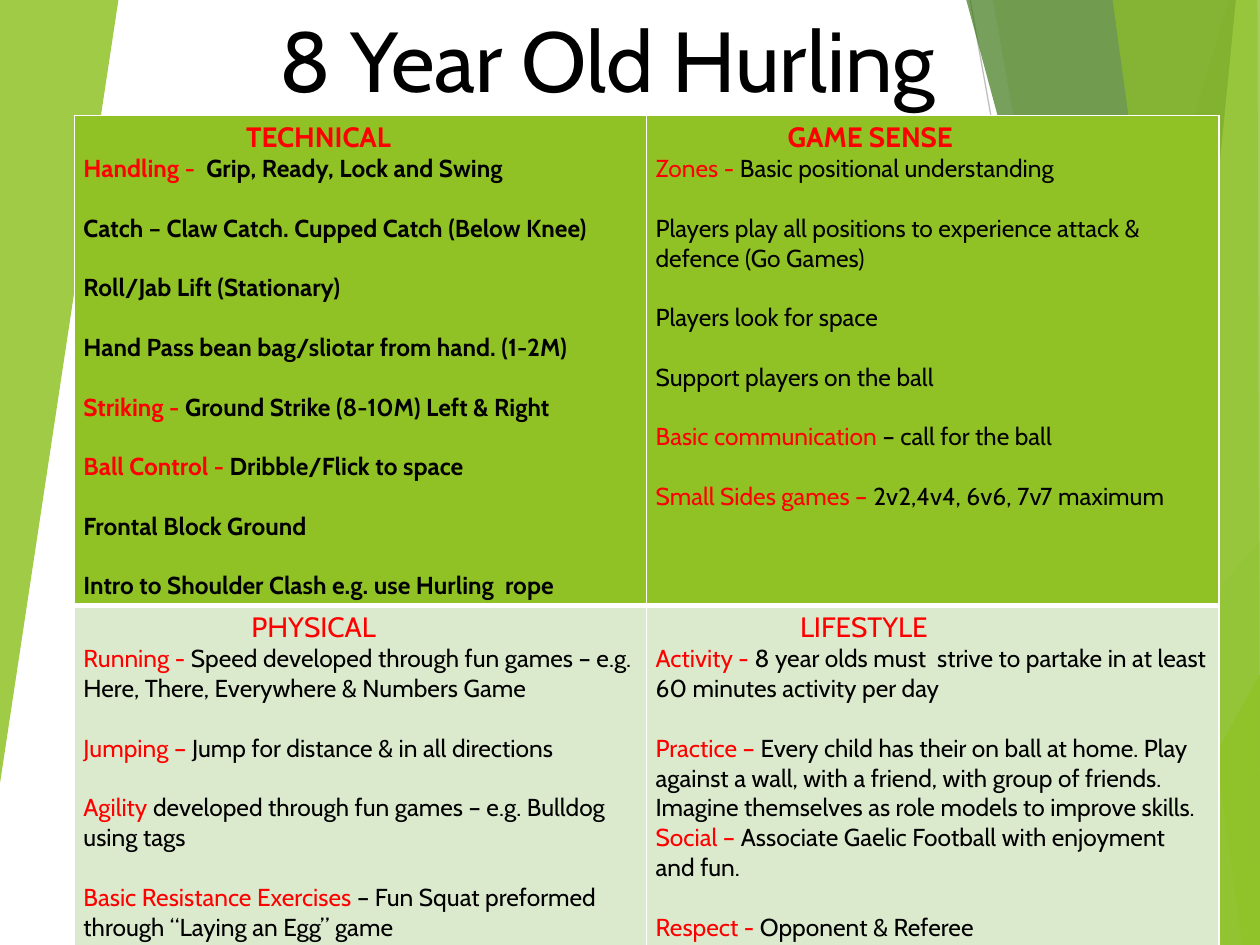
from pptx import Presentation
from pptx.dml import color
from pptx.enum import shapes, text
from pptx.oxml import parse_xml, ns
from pptx.util import Pt

FONT = "Cabin"
RED, BLACK, WHITE, LIME = "FF0000", "000000", "FFFFFF", "90C226"
LINE_GAP = 17

STREAKS = [((404, 540), (720, 329), "D9D9D9"), ((554.4, 0), (651, 540), "BFBFBF")]
SHARDS = [
    ([(702, 0), (543, 540), (720, 540), (720, 0)], LIME, 30),
    ([(567.4, 0), (661.7, 540), (720, 540), (720, 0)], LIME, 20),
    ([(522.7, 540), (720, 309), (720, 540)], "54A021", 72),
    ([(552.2, 0), (698.4, 540), (720, 540), (720, 0)], "3F7819", 70),
    ([(706.3, 0), (653, 540), (720, 540), (720, 0)], "C0E474", 70),
    ([(635.8, 0), (710, 540), (720, 540), (718.6, 0)], LIME, 65),
    ([(634.3, 540), (720, 385.2), (720, 540)], LIME, 80),
    ([(0, 0), (67.7, 0), (0, 447.8)], LIME, 85),
]

TECHNICAL = [
    (0, "Handling - ", " Grip, Ready, Lock and Swing"),
    (1, "", "Catch – Claw Catch. Cupped Catch (Below Knee)"),
    (1, "", "Roll/Jab Lift (Stationary)"),
    (1, "", "Hand Pass bean bag/sliotar from hand. (1-2M)"),
    (1, "Striking - ", "Ground Strike (8-10M) Left & Right"),
    (1, "Ball Control - ", "Dribble/Flick to space"),
    (1, "", "Frontal Block Ground"),
    (1, "", "Intro to Shoulder Clash e.g. use Hurling  rope"),
]
GAME_SENSE = [
    (0, "Zones - ", "Basic positional understanding"),
    (1, "", "Players play all positions to experience attack & defence (Go Games)"),
    (1, "", "Players look for space"),
    (1, "", "Support players on the ball"),
    (1, "Basic communication ", "– call for the ball"),
    (1, "Small Sides games – ", "2v2,4v4, 6v6, 7v7 maximum"),
]
PHYSICAL = [
    (0, "Running - ", "Speed developed through fun games – e.g. Here, There, "
                      "Everywhere & Numbers Game"),
    (1, "Jumping – ", "Jump for distance & in all directions"),
    (1, "Agility", " developed through fun games – e.g. Bulldog using tags"),
    (1, "Basic Resistance Exercises ", "– Fun Squat preformed through “Laying an Egg” game"),
]
LIFESTYLE = [
    (0, "Activity - ", "8 year olds must  strive to partake in at least 60 minutes "
                       "activity per day"),
    (1, "Practice – ", "Every child has their on ball at home. Play against a wall, "
                       "with a friend, with group of friends."),
    (0, "", "Imagine themselves as role models to improve skills."),
    (0, "Social – ", "Associate Gaelic Football with enjoyment and fun."),
    (1, "Respect - ", "Opponent & Referee"),
]
GRID = [
    [("TECHNICAL", 93, True, True, TECHNICAL), ("GAME SENSE", 75.5, True, False, GAME_SENSE)],
    [("PHYSICAL", 96, False, False, PHYSICAL), ("LIFESTYLE", 82.5, False, False, LIFESTYLE)],
]


def rgb(value):
    return color.RGBColor.from_string(value)


def write(para, words, size=14, ink=BLACK, bold=False):
    span = para.add_run()
    span.text = words
    span.font.name = FONT
    span.font.size = Pt(size)
    span.font.bold = bold
    span.font.color.rgb = rgb(ink)


class SlideMaker:
    def __init__(self, deck):
        self.page = deck.slides.add_slide(deck.slide_layouts[5])

    def line(self, start, end, ink, width=0.75):
        line = self.page.shapes.add_connector(
            shapes.MSO_CONNECTOR.STRAIGHT, *map(Pt, start + end))
        line.line.color.rgb = rgb(ink)
        line.line.width = Pt(width)
        line._element.spPr.append(parse_xml(f"<a:effectLst {ns.nsdecls('a')}/>"))

    def polygon(self, points, ink, opacity):
        corners = [(Pt(x), Pt(y)) for x, y in points]
        builder = self.page.shapes.build_freeform(*corners[0])
        builder.add_line_segments(corners[1:], close=True)
        shape = builder.convert_to_shape()
        shape.shadow.inherit = False
        shape.line.fill.background()
        shape.fill.solid()
        shape.fill.fore_color.rgb = rgb(ink)
        tint = shape._element.spPr.find(".//" + ns.qn("a:srgbClr"))
        tint.append(parse_xml(f'<a:alpha {ns.nsdecls("a")} val="{opacity * 1000}"/>'))

    def title(self, words, left, top, width, height):
        box = self.page.shapes.title
        box.left, box.top, box.width, box.height = map(Pt, (left, top, width, height))
        frame = box.text_frame
        frame.auto_size = text.MSO_AUTO_SIZE.NONE
        frame.word_wrap = True
        frame.vertical_anchor = text.MSO_ANCHOR.BOTTOM
        para = frame.paragraphs[0]
        para.alignment = text.PP_ALIGN.RIGHT
        write(para, words, size=48.6)

    def table(self, grid, left, top, column_width, row_heights, fills):
        table = self.page.shapes.add_table(
            len(grid), len(grid[0]), Pt(left), Pt(top),
            Pt(column_width * len(grid[0])), Pt(sum(row_heights))).table
        table.first_row = table.horz_banding = False
        for column in table.columns:
            column.width = Pt(column_width)
        for i, sections in enumerate(grid):
            table.rows[i].height = Pt(row_heights[i])
            for j, section in enumerate(sections):
                cell = table.cell(i, j)
                self.fill_cell(cell, fills[i], top_line=3 if i else 1,
                               bottom_line=1 if i else 3)
                self.section(cell.text_frame, *section)

    def fill_cell(self, cell, ink, top_line, bottom_line):
        cell.margin_left = cell.margin_right = Pt(5.2)
        cell.margin_top = cell.margin_bottom = Pt(2.7)
        cell.fill.solid()
        cell.fill.fore_color.rgb = rgb(ink)
        edges = (("L", 1), ("R", 1), ("T", top_line), ("B", bottom_line))
        for i, (side, width) in enumerate(edges):
            cell._tc.tcPr.insert(i, parse_xml(
                f'<a:ln{side} {ns.nsdecls("a")} w="{Pt(width)}"><a:solidFill>'
                f'<a:srgbClr val="{WHITE}"/></a:solidFill></a:ln{side}>'))

    def section(self, frame, heading, indent, bold_heading, bold_body, entries):
        para = frame.paragraphs[0]
        para._p.get_or_add_pPr().set("marL", str(Pt(indent)))
        write(para, heading, size=16, ink=RED, bold=bold_heading)
        for gap, lead, body in entries:
            para = frame.add_paragraph()
            para.space_before = Pt(gap * LINE_GAP)
            if lead:
                write(para, lead, ink=RED, bold=bold_body)
            write(para, body, bold=bold_body)


def main():
    deck = Presentation()
    deck.slide_width, deck.slide_height = Pt(720), Pt(540)
    maker = SlideMaker(deck)
    for streak in STREAKS:
        maker.line(*streak)
    for shard in SHARDS:
        maker.polygon(*shard)
    maker.title("8 Year Old Hurling", 54, 15, 487.5, 51)
    maker.table(GRID, 42.5, 66, 327, (255, 204), (LIME, "DBE9CD"))
    deck.save("out.pptx")


if __name__ == "__main__":
    main()
